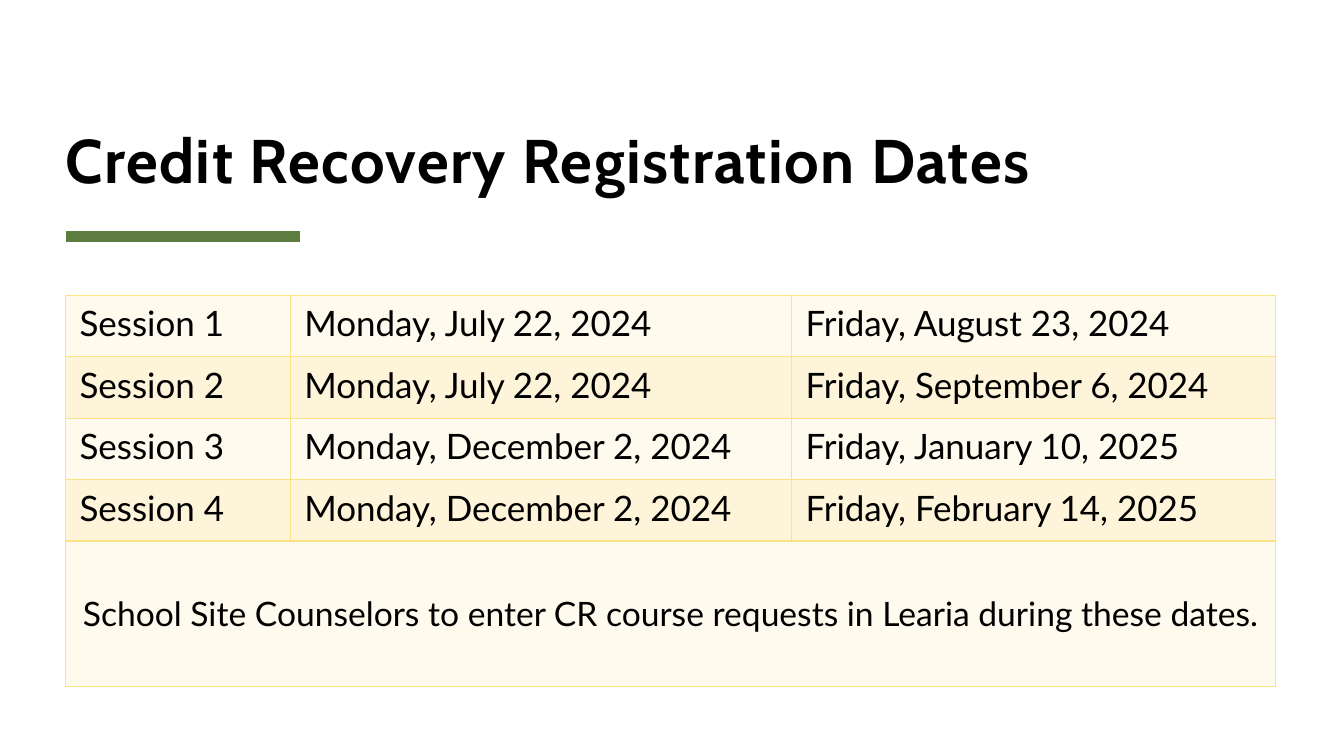
import pptx
import pptx.util
import pptx.dml.color
import pptx.enum.shapes
import pptx.enum.text
import pptx.oxml
import pptx.oxml.ns

INK, GREEN, GOLD = "000000", "5D7D40", "FBE284"
BANDS = ("FEFAED", "FDF4D9")
DATES = [
    ("Session 1", "Monday, July 22, 2024", "Friday, August 23, 2024"),
    ("Session 2", "Monday, July 22, 2024", "Friday, September 6, 2024"),
    ("Session 3", "Monday, December 2, 2024", "Friday, January 10, 2025"),
    ("Session 4", "Monday, December 2, 2024", "Friday, February 14, 2025"),
]
NOTE = "School Site Counselors to enter CR course requests in Learia during these dates."
WIDTHS = (2.23, 4.97, 4.8)
HEIGHTS = (1,) * len(DATES) + (2.36,)


def color(code):
    return pptx.dml.color.RGBColor.from_string(code)


class Page:
    """Draws styled elements on one slide, placed on a grid of columns and rows."""

    left, top, col, row = 0.65, 0.22, 1, 0.61
    head, body = "Cabin", "Lato"

    def __init__(self, deck):
        self.slide = deck.slides.add_slide(deck.slide_layouts[5])

    def wide(self, cols):
        return pptx.util.Inches(cols * self.col)

    def high(self, rows):
        return pptx.util.Inches(rows * self.row)

    def spot(self, col, row):
        return (pptx.util.Inches(self.left) + self.wide(col),
                pptx.util.Inches(self.top) + self.high(row))

    def run(self, para, text, font, size, bold=False):
        run = para.add_run()
        run.text = text
        run.font.name, run.font.size, run.font.bold = font, pptx.util.Pt(size), bold
        run.font.color.rgb = color(INK)
        return run

    def title(self, text, col, row, cols, rows):
        box = self.slide.shapes.title
        box.left, box.top = self.spot(col, row)
        box.width, box.height = self.wide(cols), self.high(rows)
        frame = box.text_frame
        frame.word_wrap = True
        frame.auto_size = pptx.enum.text.MSO_AUTO_SIZE.NONE
        frame.vertical_anchor = pptx.enum.text.MSO_ANCHOR.BOTTOM
        frame.margin_left = frame.margin_right = 0
        frame.margin_top = frame.margin_bottom = 0
        para = frame.paragraphs[0]
        para.alignment = pptx.enum.text.PP_ALIGN.LEFT
        para.line_spacing = 0.8
        run = self.run(para, text, self.head, 44, True)
        run.font._element.set("spc", "100")

    def rule(self, col, row, cols):
        start = self.spot(col, row)
        end = self.spot(col + cols, row)
        kind = pptx.enum.shapes.MSO_CONNECTOR.STRAIGHT
        line = self.slide.shapes.add_connector(kind, *start, *end)
        line.line.color.rgb = color(GREEN)
        line.line.width = pptx.util.Pt(8)
        line._element.spPr.append(pptx.oxml.parse_xml(
            f"<a:effectLst {pptx.oxml.ns.nsdecls('a')}/>"))

    def border(self, cell):
        props = cell._tc.get_or_add_tcPr()
        for side in "LRTB":
            props.append(pptx.oxml.parse_xml(
                f'<a:ln{side} {pptx.oxml.ns.nsdecls("a")} w="12700"><a:solidFill>'
                f'<a:srgbClr val="{GOLD}"/></a:solidFill></a:ln{side}>'))

    def cell(self, cell, text, fill, size=25):
        self.border(cell)
        cell.fill.solid()
        cell.fill.fore_color.rgb = color(fill)
        cell.margin_left = cell.margin_right = pptx.util.Inches(0.14)
        cell.margin_top = cell.margin_bottom = pptx.util.Inches(0.07)
        if text:
            self.run(cell.text_frame.paragraphs[0], text, self.body, size)

    def table(self, col, row, data, note):
        shape = self.slide.shapes.add_table(
            len(HEIGHTS), len(WIDTHS), *self.spot(col, row),
            self.wide(sum(WIDTHS)), self.high(sum(HEIGHTS)))
        grid = shape.table
        grid.first_row = grid.horz_banding = False
        for item, cols in zip(grid.columns, WIDTHS):
            item.width = self.wide(cols)
        for item, rows in zip(grid.rows, HEIGHTS):
            item.height = self.high(rows)
        last = len(data)
        for r, texts in enumerate(data):
            for c, text in enumerate(texts):
                self.cell(grid.cell(r, c), text, BANDS[r % 2])
        foot = grid.cell(last, 0)
        foot.merge(grid.cell(last, len(WIDTHS) - 1))
        for c in range(len(WIDTHS)):
            self.cell(grid.cell(last, c), "" if c else note, BANDS[last % 2], 24)
        foot.vertical_anchor = pptx.enum.text.MSO_ANCHOR.MIDDLE
        foot.text_frame.paragraphs[0].alignment = pptx.enum.text.PP_ALIGN.CENTER


def main():
    deck = pptx.Presentation()
    deck.slide_width = pptx.util.Inches(13.33)
    deck.slide_height = pptx.util.Inches(7.5)
    page = Page(deck)
    page.rule(0, 3.49, 2.33)
    page.title("Credit Recovery Registration Dates", 0, 0, 12, 2.82)
    page.table(0, 4.44, DATES, NOTE)
    deck.save("out.pptx")


if __name__ == "__main__":
    main()
